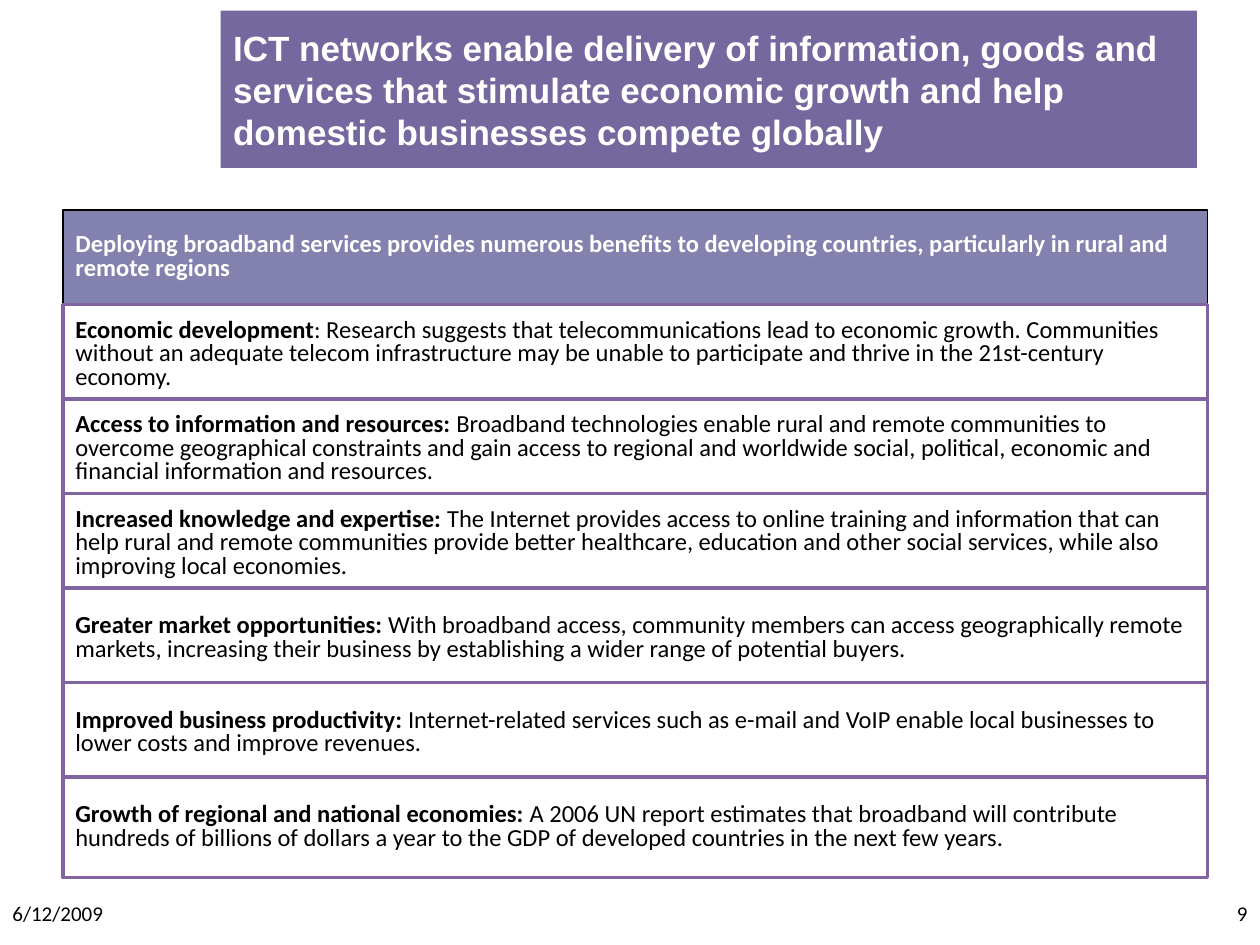
import pptx
import pptx.dml.color
import pptx.enum.shapes
import pptx.enum.text
import pptx.util

PX = 7620
SHAPE = pptx.enum.shapes.MSO_SHAPE
ALIGN = pptx.enum.text.PP_ALIGN
ANCHOR = pptx.enum.text.MSO_ANCHOR
WHITE = pptx.dml.color.RGBColor(0xFF, 0xFF, 0xFF)
BLACK = pptx.dml.color.RGBColor(0x00, 0x00, 0x00)
TITLE_PURPLE = pptx.dml.color.RGBColor(0x75, 0x68, 0x9F)
HEADING_BLUE = pptx.dml.color.RGBColor(0x83, 0x81, 0xAD)
BORDER_PURPLE = pptx.dml.color.RGBColor(0x80, 0x64, 0xA2)

TITLE_FONT = {"name": "Arial", "size": pptx.util.Pt(20), "bold": True}
STRONG_FONT = {"name": "Calibri", "size": pptx.util.Pt(14), "bold": True}
PLAIN_FONT = {**STRONG_FONT, "bold": False}
FOOTER_FONT = {"name": "Calibri", "size": pptx.util.Pt(12), "bold": False}

TITLE = (
    "ICT networks enable delivery of information, goods and services that "
    "stimulate economic growth and help domestic businesses compete globally"
)
HEADING = (
    "Deploying broadband services provides numerous benefits to developing "
    "countries, particularly in rural and remote regions"
)
BENEFITS = [
    ("Economic development",
     ": Research suggests that telecommunications lead to economic growth. "
     "Communities without an adequate telecom infrastructure may be unable to "
     "participate and thrive in the 21st-century economy."),
    ("Access to information and resources: ",
     "Broadband technologies enable rural and remote communities to overcome "
     "geographical constraints and gain access to regional and worldwide social, "
     "political, economic and financial information and resources."),
    ("Increased knowledge and expertise: ",
     "The Internet provides access to online training and information that can "
     "help rural and remote communities provide better healthcare, education and "
     "other social services, while also improving local economies."),
    ("Greater market opportunities: ",
     "With broadband access, community members can access geographically remote "
     "markets, increasing their business by establishing a wider range of "
     "potential buyers."),
    ("Improved business productivity: ",
     "Internet-related services such as e-mail and VoIP enable local businesses "
     "to lower costs and improve revenues."),
    ("Growth of regional and national economies: ",
     "A 2006 UN report estimates that broadband will contribute hundreds of "
     "billions of dollars a year to the GDP of developed countries in the next "
     "few years."),
]


def apply(target, values):
    for name, value in values.items():
        setattr(target, name, value)


def to_emu(box):
    return [length * PX for length in box]


def write(shape, spans, color, anchor=ANCHOR.MIDDLE, **para_format):
    apply(shape.text_frame, {
        "word_wrap": True,
        "vertical_anchor": anchor,
        "auto_size": pptx.enum.text.MSO_AUTO_SIZE.NONE,
    })
    para = shape.text_frame.paragraphs[0]
    apply(para, {"alignment": ALIGN.LEFT, **para_format})
    for text, font in spans:
        span = para.add_run()
        span.text = text
        apply(span.font, font)
        span.font.color.rgb = color


def paint(shape, fill):
    shape.fill.solid()
    shape.fill.fore_color.rgb = fill


def add_title(page, box):
    title = page.shapes.title
    apply(title, dict(zip(("left", "top", "width", "height"), to_emu(box))))
    paint(title, TITLE_PURPLE)
    write(title, [(TITLE, TITLE_FONT)], WHITE)


def add_panel(page, kind, box, fill, border, weight, spans, color):
    panel = page.shapes.add_shape(kind, *to_emu(box))
    panel.shadow.inherit = False
    paint(panel, fill)
    panel.line.color.rgb = border
    panel.line.width = pptx.util.Pt(weight)
    write(panel, spans, color, line_spacing=0.8)
    return panel


def add_benefits(page, box, pitch, row_height):
    left, top, width = box
    add_panel(page, SHAPE.RECTANGLE, (left, top, width, pitch), HEADING_BLUE,
              BLACK, 0.75, [(HEADING, STRONG_FONT)], WHITE)
    for index, (name, detail) in enumerate(BENEFITS, start=1):
        row = add_panel(page, SHAPE.RIGHT_ARROW,
                        (left, top + index * pitch, width, row_height),
                        WHITE, BORDER_PURPLE, 2,
                        [(name, STRONG_FONT), (detail, PLAIN_FONT)], BLACK)
        row.adjustments[0] = 1
        row.adjustments[1] = 0


def add_footer(page, box, label_width):
    left, top, width, height = box
    labels = [
        ("6/12/2009", left, ALIGN.LEFT),
        ("9", left + width - label_width, ALIGN.RIGHT),
    ]
    for text, label_left, alignment in labels:
        label = page.shapes.add_textbox(
            *to_emu((label_left, top, label_width, height)))
        write(label, [(text, FOOTER_FONT)], BLACK, ANCHOR.TOP,
              alignment=alignment)


def main():
    deck = pptx.Presentation()
    deck.slide_width, deck.slide_height = to_emu((1200, 900))
    page = deck.slides.add_slide(deck.slide_layouts[5])
    add_title(page, (210, 10, 930, 150))
    add_benefits(page, (60, 200, 1090), pitch=90, row_height=96)
    add_footer(page, (0, 852, 1200, 48), label_width=280)
    deck.save("out.pptx")


if __name__ == "__main__":
    main()
